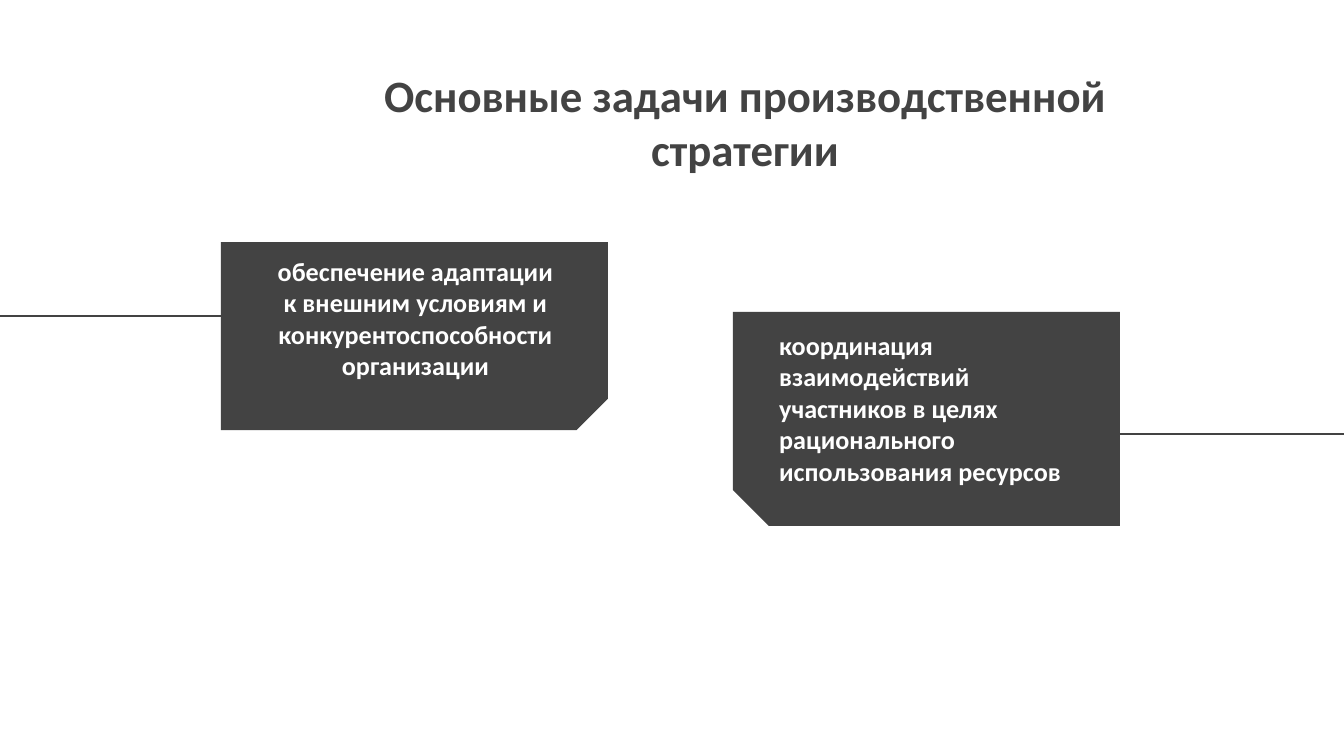
from pptx import Presentation
from pptx import util as u
from pptx.dml.color import RGBColor
from pptx.enum import shapes, text
from pptx.oxml.ns import qn
from lxml import etree

DARK, WHITE = "434343", "FFFFFF"
LEFT, MID = text.PP_ALIGN.LEFT, text.PP_ALIGN.CENTER
TITLE = "Основные задачи производственной стратегии"
TASKS = [
    dict(words="обеспечение адаптации к внешним условиям и конкурентоспособности организации",
         card=(221, 242, 387, 188), label=(257, 242), align=MID,
         turn=90, flip=False, line=(221, 0, 316)),
    dict(words="координация взаимодействий участников в целях рационального использования ресурсов",
         card=(733, 312, 387, 214), label=(766, 316), align=LEFT,
         turn=270, flip=True, line=(1120, 1344, 434)),
]


def px(n):
    return u.Emu(round(n * 914400 / 134.4))


def tint(code):
    return RGBColor.from_string(code)


def write(words, box, size=14, color=WHITE, align=MID, anchor=text.MSO_ANCHOR.TOP):
    frame = slide.shapes.add_textbox(*map(px, box)).text_frame
    frame.word_wrap = True
    frame.vertical_anchor = anchor
    frame.margin_left = frame.margin_right = u.Inches(0.1)
    frame.margin_top = frame.margin_bottom = u.Inches(0.1)
    para = frame.paragraphs[0]
    para.alignment = align
    run = para.add_run()
    run.text = words
    run.font.name, run.font.size, run.font.bold = "Calibri", u.Pt(size), True
    run.font.color.rgb = tint(color)


def draw_card(box, turn, flip):
    x, y, wide, high = box
    shift = (wide - high) / 2
    card = slide.shapes.add_shape(shapes.MSO_SHAPE.SNIP_1_RECTANGLE,
                                  px(x + shift), px(y - shift), px(high), px(wide))
    card.adjustments[0] = 0.167
    card.rotation = turn
    if flip:
        card._element.spPr.find(qn("a:xfrm")).set("flipH", "1")
    card.shadow.inherit = False
    card.fill.solid()
    card.fill.fore_color.rgb = tint(DARK)
    card.line.fill.background()


def draw_line(start, end, y):
    line = slide.shapes.add_connector(shapes.MSO_CONNECTOR.STRAIGHT,
                                      px(start), px(y), px(end), px(y))
    line.line.color.rgb = tint(DARK)
    line.line.width = u.Pt(0.75)
    etree.SubElement(line._element.spPr, qn("a:effectLst"))


deck = Presentation()
deck.slide_width, deck.slide_height = px(1344), px(756)
slide = deck.slides.add_slide(deck.slide_layouts[6])

write(TITLE, (289, 52, 912, 139), size=24, color=DARK, anchor=text.MSO_ANCHOR.MIDDLE)
for task in TASKS:
    draw_card(task["card"], task["turn"], task["flip"])
    draw_line(*task["line"])
    write(task["words"], (*task["label"], 317, 148), align=task["align"])

deck.save("out.pptx")
